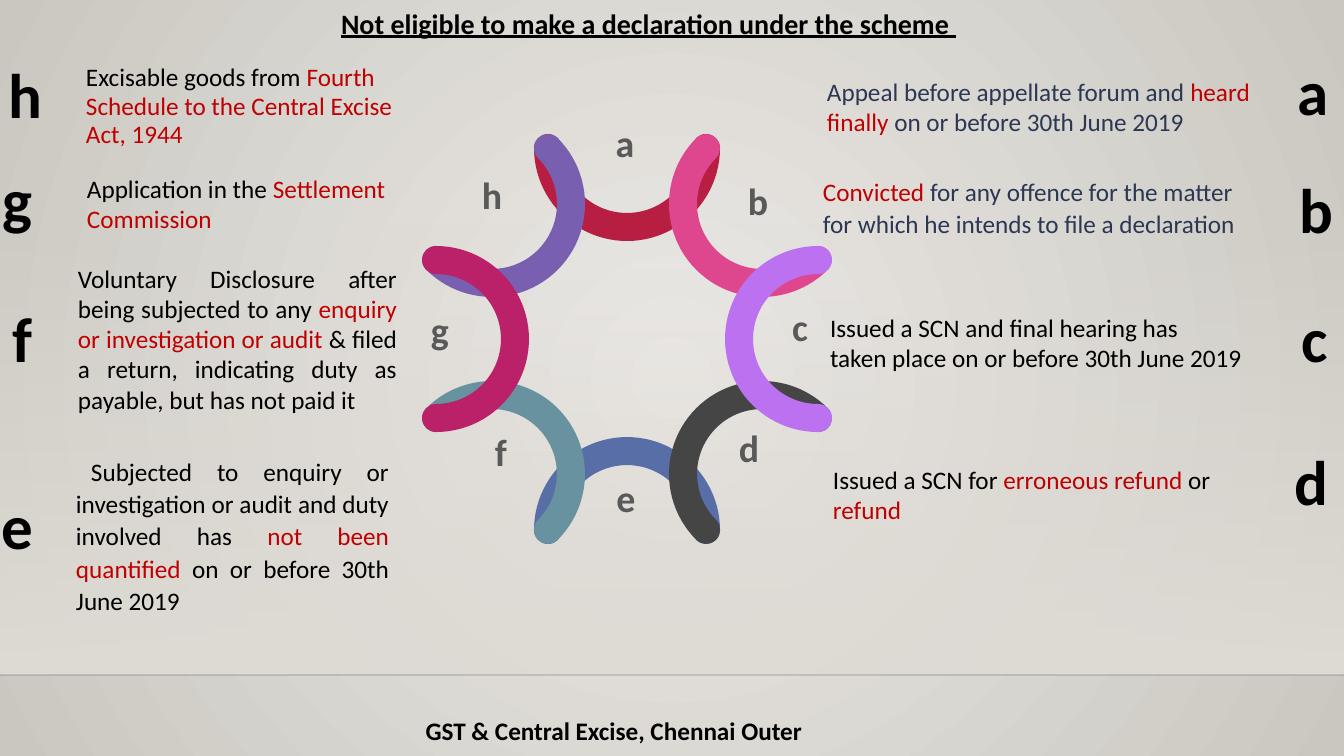
"""Builds the slide listing who may not make a declaration under the scheme."""
from dataclasses import dataclass
from math import cos, radians, sin

from lxml.etree import SubElement
from pptx import Presentation
from pptx.dml.color import RGBColor
from pptx.enum.shapes import MSO_CONNECTOR, MSO_SHAPE
from pptx.enum.text import MSO_ANCHOR, MSO_AUTO_SIZE, PP_ALIGN
from pptx.oxml.ns import qn
from pptx.util import Emu, Pt

EMU_PER_PX = 914400 / 100.8
SLIDE_WIDTH, SLIDE_HEIGHT = 1344, 756
FONT = "Calibri"
BLACK = RGBColor(0x00, 0x00, 0x00)
RED = RGBColor(0xC0, 0x00, 0x00)
NAVY = RGBColor(0x2C, 0x37, 0x53)
GREY = RGBColor(0x59, 0x59, 0x59)
SAND = RGBColor(0xDF, 0xDB, 0xD5)
GLOW = RGBColor(0xEC, 0xEA, 0xE7)
EDGE = RGBColor(0xCA, 0xC7, 0xC1)
RULE = RGBColor(0x00, 0x00, 0x01)

RING_X, RING_Y, RING_RADIUS, ARC_SIZE = 627, 339, 191, 158
DRAW_ORDER = "efdabhgc"
FLOOR_TOP, FLOOR_BOTTOM = 223, 675


@dataclass(frozen=True)
class Span:
    text: str
    color: RGBColor = BLACK
    size: float = 18
    bold: bool = False
    underline: bool = False


@dataclass(frozen=True)
class Frame:
    left: int
    top: int
    width: int
    height: int


@dataclass(frozen=True)
class Style:
    align: PP_ALIGN = PP_ALIGN.LEFT
    spacing: float | Pt = 1.0
    indent: int = 0
    wrap: bool = True


@dataclass(frozen=True)
class Clause:
    letter: str
    arc_color: RGBColor
    ring_x: int
    ring_y: int
    edge_x: int
    edge_y: int
    frame: Frame
    lines: list[list[Span]]
    style: Style = Style()


LOOSE = Style(spacing=1.07)
CLAUSES = [
    Clause("a", RGBColor(0xB7, 0x1E, 0x42), 625, 143, 1329, 53, Frame(827, 76, 475, 62),
           [[Span("Appeal before appellate forum and ", NAVY), Span("heard finally", RED),
             Span(" on or before 30th June 2019", NAVY)]]),
    Clause("b", RGBColor(0xDE, 0x47, 0x8E), 758, 201, 1333, 171, Frame(823, 174, 440, 66),
           [[Span("Convicted ", RED), Span("for any offence for the matter", NAVY)],
            [Span("for which he intends to file a declaration", NAVY)]], LOOSE),
    Clause("c", RGBColor(0xBC, 0x72, 0xF0), 800, 327, 1328, 300, Frame(830, 312, 440, 62),
           [[Span("Issued a SCN and final hearing has")],
            [Span("taken place on or before 30th June 2019")]]),
    Clause("d", RGBColor(0x45, 0x45, 0x45), 749, 448, 1328, 443, Frame(833, 464, 430, 62),
           [[Span("Issued a SCN for "), Span("erroneous refund ", RED),
             Span("or "), Span("refund", RED)]]),
    Clause("e", RGBColor(0x58, 0x6E, 0xA6), 626, 498, 2, 487, Frame(76, 454, 313, 165),
           [[Span("Subjected to enquiry or investigation or audit and duty involved has "),
             Span("not been quantified ", RED), Span("on or before 30th June 2019")]],
           Style(PP_ALIGN.JUSTIFY, 1.07, 15)),
    Clause("f", RGBColor(0x68, 0x92, 0xA0), 501, 452, 13, 300, Frame(78, 263, 319, 154),
           [[Span("Voluntary Disclosure after being subjected to any "),
             Span("enquiry or investigation or audit ", RED),
             Span("& filed a return, indicating duty as payable, but has not paid it")]],
           Style(PP_ALIGN.JUSTIFY)),
    Clause("g", RGBColor(0xBA, 0x21, 0x69), 440, 330, 3, 161, Frame(87, 173, 361, 62),
           [[Span("Application in the "), Span("Settlement Commission", RED)]]),
    Clause("h", RGBColor(0x79, 0x5F, 0xAF), 492, 195, 9, 56, Frame(86, 64, 340, 84),
           [[Span("Excisable goods from "), Span("Fourth", RED)],
            [Span("Schedule to the Central Excise", RED)], [Span("Act, 1944", RED)]],
           Style(spacing=Pt(20))),
]


def px(length: float) -> Emu:
    """Turn px into EMU."""
    return Emu(round(length * EMU_PER_PX))


def place(shape, frame: Frame) -> None:
    """Move and size a shape."""
    shape.left, shape.top = px(frame.left), px(frame.top)
    shape.width, shape.height = px(frame.width), px(frame.height)


def write(shape, lines: list[list[Span]], style: Style) -> None:
    """Fill a shape with formatted paragraphs."""
    text = shape.text_frame
    text.margin_left = text.margin_right = text.margin_top = text.margin_bottom = 0
    text.auto_size, text.word_wrap = MSO_AUTO_SIZE.NONE, style.wrap
    text.vertical_anchor = MSO_ANCHOR.TOP
    for index, spans in enumerate(lines):
        para = text.add_paragraph() if index else text.paragraphs[0]
        para.alignment, para.line_spacing = style.align, style.spacing
        if style.indent:
            para._p.get_or_add_pPr().set("indent", str(px(style.indent)))
        for span in spans:
            run = para.add_run()
            run.text = span.text
            font = run.font
            font.name, font.size, font.bold = FONT, Pt(span.size), span.bold
            font.underline = span.underline
            font.color.rgb = span.color


def add_text(page, frame: Frame, lines: list[list[Span]], style: Style = Style()) -> None:
    """Add a text box."""
    box = page.shapes.add_textbox(0, 0, 0, 0)
    place(box, frame)
    write(box, lines, style)


def set_alpha(color_element, percent: int) -> None:
    """Set the opacity of a colour."""
    SubElement(color_element, qn("a:alpha")).set("val", str(percent * 1000))


def set_gradient(fill, first: RGBColor, last: RGBColor) -> None:
    """Give a fill a gradient of two stops."""
    fill.gradient()
    for stop, color, position in zip(fill.gradient_stops, (first, last), (0, 1)):
        stop.color.rgb, stop.position = color, position


def draw_backdrop(page) -> None:
    """Draw the glow, the floor and the rule above the footer."""
    set_gradient(page.background.fill, GLOW, EDGE)
    gradient = page._element.find(".//" + qn("a:gradFill"))
    gradient.remove(gradient.find(qn("a:lin")))
    glow_path = SubElement(gradient, qn("a:path"))
    glow_path.set("path", "circle")
    center = SubElement(glow_path, qn("a:fillToRect"))
    for side in "ltrb":
        center.set(side, "50000")

    floor = page.shapes.add_shape(MSO_SHAPE.RECTANGLE, 0, 0, 0, 0)
    place(floor, Frame(0, FLOOR_TOP, SLIDE_WIDTH, FLOOR_BOTTOM - FLOOR_TOP))
    floor.shadow.inherit = False
    floor.line.fill.background()
    set_gradient(floor.fill, SAND, SAND)
    floor.fill.gradient_angle = 270
    set_alpha(floor._element.spPr.find(".//" + qn("a:srgbClr")), 0)

    rule = page.shapes.add_connector(MSO_CONNECTOR.STRAIGHT, 0, px(FLOOR_BOTTOM),
                                     px(SLIDE_WIDTH), px(FLOOR_BOTTOM))
    rule.line.width = Pt(1)
    rule.line.color.rgb = RULE
    set_alpha(rule._element.spPr.find(".//" + qn("a:srgbClr")), 20)
    SubElement(rule._element.spPr, qn("a:effectLst"))


def draw_arc(page, clause: Clause) -> None:
    """Draw one half circle of the ring."""
    turn = 45 * CLAUSES.index(clause)
    angle = radians(turn - 90)
    arc = page.shapes.add_shape(MSO_SHAPE.ARC, 0, 0, 0, 0)
    place(arc, Frame(round(RING_X + RING_RADIUS * cos(angle) - ARC_SIZE / 2),
                     round(RING_Y + RING_RADIUS * sin(angle) - ARC_SIZE / 2),
                     ARC_SIZE, ARC_SIZE))
    arc.adjustments[0], arc.adjustments[1] = 162, 54
    arc.rotation = (turn + 90) % 360
    arc.shadow.inherit = False
    arc.fill.background()
    arc.line.color.rgb, arc.line.width = clause.arc_color, Pt(20)
    arc.line._ln.set("cap", "rnd")


def draw_clause(page, clause: Clause) -> None:
    """Draw the ring letter, the edge letter and the wording of a clause."""
    add_text(page, Frame(clause.ring_x - 21, clause.ring_y - 23, 42, 46),
             [[Span(clause.letter, GREY, 27, True)]], Style(PP_ALIGN.CENTER, wrap=False))
    on_right = clause.edge_x > RING_X
    add_text(page, Frame(clause.edge_x - 40 * on_right, clause.edge_y, 40, 77),
             [[Span(clause.letter, size=45, bold=True)]],
             Style(PP_ALIGN.RIGHT if on_right else PP_ALIGN.LEFT, wrap=False))
    add_text(page, clause.frame, clause.lines, clause.style)


def main() -> None:
    """Build and save the deck."""
    deck = Presentation()
    deck.slide_width, deck.slide_height = px(SLIDE_WIDTH), px(SLIDE_HEIGHT)
    page = deck.slides.add_slide(deck.slide_layouts[5])
    draw_backdrop(page)
    place(page.shapes.title, Frame(341, 6, 702, 36))
    write(page.shapes.title, [[Span("Not eligible to make a declaration under the scheme ",
                                    size=20, bold=True, underline=True)]], Style())
    by_letter = {clause.letter: clause for clause in CLAUSES}
    for letter in DRAW_ORDER:
        draw_arc(page, by_letter[letter])
    for clause in CLAUSES:
        draw_clause(page, clause)
    add_text(page, Frame(308, 715, 612, 31),
             [[Span("GST & Central Excise, Chennai Outer", bold=True)]],
             Style(PP_ALIGN.CENTER))
    deck.save("out.pptx")


if __name__ == "__main__":
    main()
